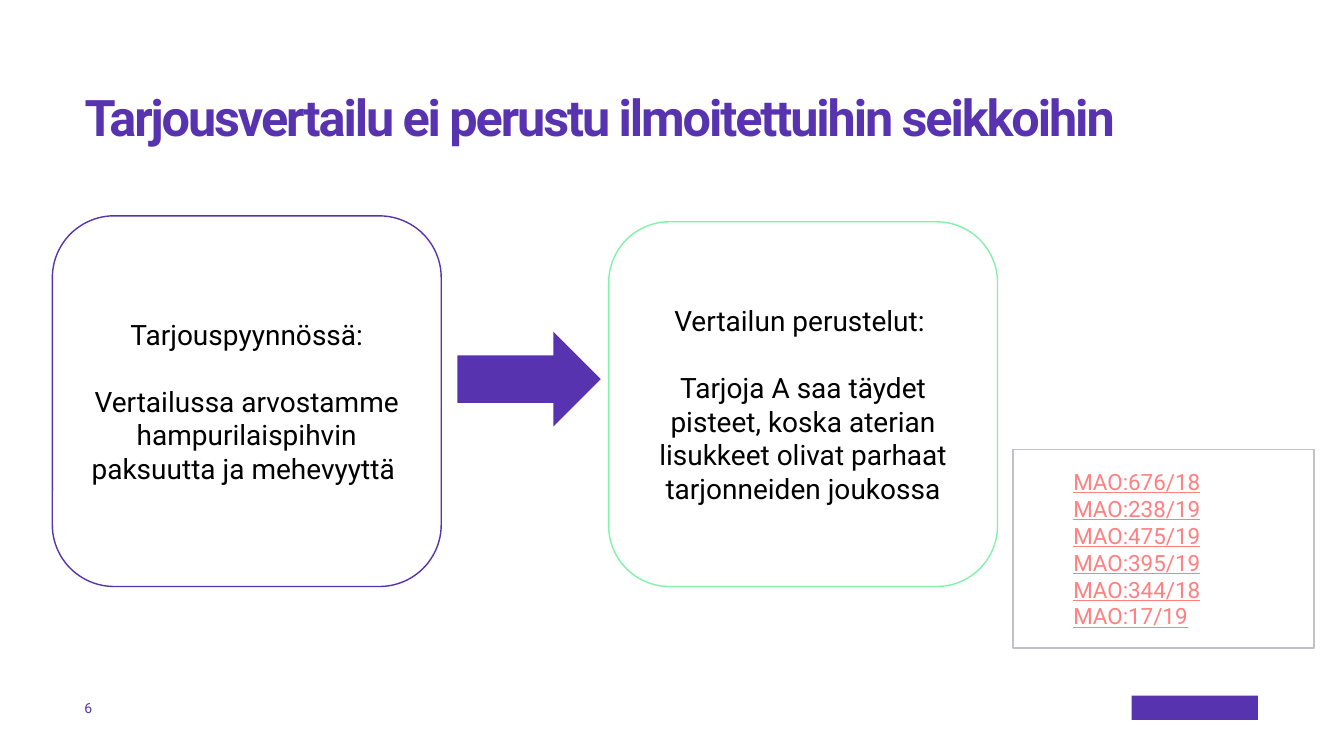
import pptx
import pptx.util
import pptx.dml.color
import pptx.enum.shapes
import pptx.enum.text
from dataclasses import dataclass

Cm, Pt = pptx.util.Cm, pptx.util.Pt
SHAPE = pptx.enum.shapes.MSO_SHAPE
ALIGN = pptx.enum.text.PP_ALIGN
ANCHOR = pptx.enum.text.MSO_ANCHOR

# Content
HEADLINE = "Tarjousvertailu ei perustu ilmoitettuihin seikkoihin"
REQUEST = ["Tarjouspyynnössä:",
           "Vertailussa arvostamme hampurilaispihvin paksuutta ja mehevyyttä "]
GROUNDS = ["Vertailun perustelut: ",
           "Tarjoja A saa täydet pisteet, koska aterian lisukkeet olivat "
           "parhaat tarjonneiden joukossa"]
RULINGS = ["MAO:676/18", "MAO:238/19", "MAO:475/19",
           "MAO:395/19", "MAO:344/18", "MAO:17/19"]
PAGE_NUMBER = "6"


@dataclass(frozen=True)
class Theme:
    font: str = "Roboto"
    purple: str = "5733AF"
    green: str = "81F3A9"
    coral: str = "FE8081"
    grey: str = "C5BFCA"
    white: str = "FFFFFF"
    black: str = "000000"
    title_size: int = 36
    body_size: int = 20
    ruling_size: int = 16
    page_size: int = 10


THEME = Theme()

# Layout in centimetres
MARGIN = 2.13
CARD_WIDTH, CARD_BOTTOM = 9.8, 14.78
REQUEST_LEFT, REQUEST_TOP = 1.32, 5.44
GROUNDS_LEFT, GROUNDS_TOP = 15.34, 5.59
FOOTER_TOP, FOOTER_HEIGHT = 17.53, 0.61


def rgb(value):
    return pptx.dml.color.RGBColor.from_string(value)


def write(frame, paragraphs, *, size, color, align=ALIGN.LEFT, anchor=ANCHOR.MIDDLE,
          bold=False, underline=False, gap=0, indent=0, inset=None,
          line_spacing=None, tracking=None):
    """Fill a text frame with equally formatted paragraphs."""
    frame.word_wrap = True
    frame.auto_size = pptx.enum.text.MSO_AUTO_SIZE.NONE
    frame.vertical_anchor = anchor
    if inset is not None:
        frame.margin_left = frame.margin_right = Cm(inset)
        frame.margin_top = frame.margin_bottom = Cm(inset)
    for index, words in enumerate(paragraphs):
        paragraph = frame.paragraphs[0] if index == 0 else frame.add_paragraph()
        paragraph.alignment = align
        paragraph.line_spacing = line_spacing
        if index and gap:
            paragraph.space_before = Pt(gap)
        if indent:
            properties = paragraph._p.get_or_add_pPr()
            properties.set("marL", str(Cm(indent)))
            properties.set("indent", "0")
        run = paragraph.add_run()
        run.text = words
        run.font.name = THEME.font
        run.font.size = Pt(size)
        run.font.bold = bold
        run.font.underline = underline
        run.font.color.rgb = rgb(color)
        if tracking:
            run._r.get_or_add_rPr().set("spc", str(round(tracking * 100)))


def add_block(slide, kind, left, top, width, height, fill, outline=None):
    block = slide.shapes.add_shape(kind, Cm(left), Cm(top), Cm(width), Cm(height))
    block.shadow.inherit = False
    block.fill.solid()
    block.fill.fore_color.rgb = rgb(fill)
    if outline:
        block.line.color.rgb = rgb(outline)
        block.line.width = Pt(1)
    else:
        block.line.fill.background()
    return block


def main():
    deck = pptx.Presentation()
    deck.slide_width, deck.slide_height = Cm(33.87), Cm(19.05)
    slide = deck.slides.add_slide(deck.slide_layouts[5])

    # Title
    headline = slide.shapes.title
    headline.left, headline.top = Cm(MARGIN), Cm(2.34)
    headline.width, headline.height = Cm(29.62), Cm(4.39)
    write(headline.text_frame, [HEADLINE], size=THEME.title_size, color=THEME.purple,
          bold=True, anchor=ANCHOR.TOP, inset=0, line_spacing=0.9, tracking=-1.5)

    # Footer: page number and brand bar
    page = slide.shapes.add_textbox(Cm(MARGIN), Cm(FOOTER_TOP), Cm(1.19), Cm(FOOTER_HEIGHT))
    write(page.text_frame, [PAGE_NUMBER], size=THEME.page_size, color=THEME.purple, inset=0)
    add_block(slide, SHAPE.RECTANGLE, 28.52, FOOTER_TOP, 3.18, FOOTER_HEIGHT, THEME.purple)

    # Request and grounds cards
    for paragraphs, left, top, outline in (
            (REQUEST, REQUEST_LEFT, REQUEST_TOP, THEME.purple),
            (GROUNDS, GROUNDS_LEFT, GROUNDS_TOP, THEME.green)):
        card = add_block(slide, SHAPE.ROUNDED_RECTANGLE, left, top, CARD_WIDTH,
                         CARD_BOTTOM - top, THEME.white, outline)
        write(card.text_frame, paragraphs, size=THEME.body_size, color=THEME.black,
              align=ALIGN.CENTER, gap=24)

    # Arrow from request to grounds
    add_block(slide, SHAPE.RIGHT_ARROW, 11.53, 8.36, 3.61, 2.39, THEME.purple)

    # Court rulings
    rulings = add_block(slide, SHAPE.RECTANGLE, 25.53, 11.33, 7.59, 5, THEME.white, THEME.grey)
    write(rulings.text_frame, RULINGS, size=THEME.ruling_size, color=THEME.coral,
          underline=True, indent=1.27)

    deck.save("out.pptx")


if __name__ == "__main__":
    main()
